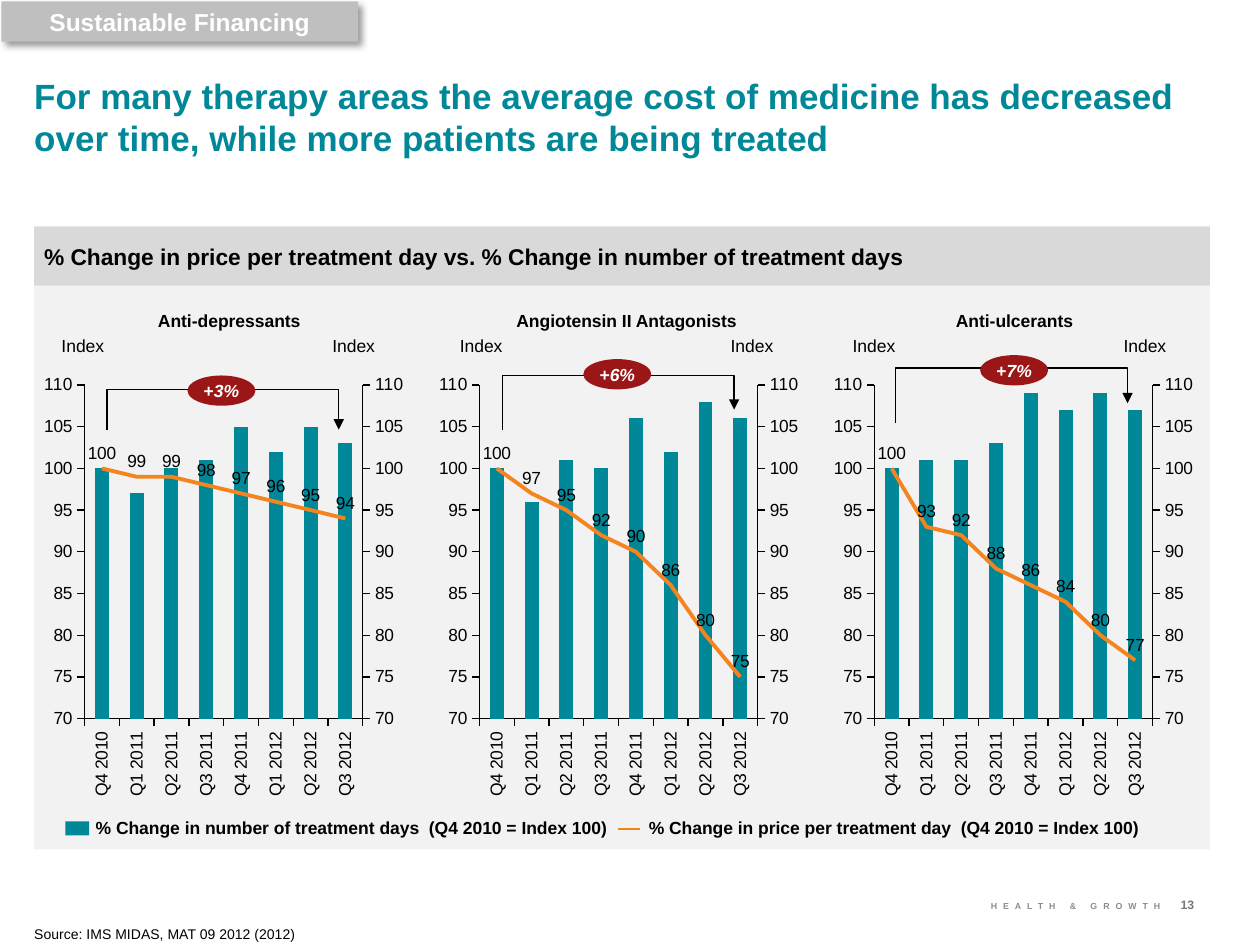
import copy
import pptx
import pptx.chart.data
import pptx.dml.color
import pptx.enum.chart
import pptx.enum.shapes
import pptx.enum.text
import pptx.oxml
import pptx.oxml.ns
import pptx.util

Cm = pptx.util.Cm
Pt = pptx.util.Pt
qn = pptx.oxml.ns.qn
Align = pptx.enum.text.PP_ALIGN
Anchor = pptx.enum.text.MSO_ANCHOR
Shapes = pptx.enum.shapes.MSO_SHAPE

TEAL, ORANGE, RED = "008898", "F5841F", "9B1717"
QUARTERS = ["Q4 2010", "Q1 2011", "Q2 2011", "Q3 2011",
            "Q4 2011", "Q1 2012", "Q2 2012", "Q3 2012"]


def color(hex_text):
    return pptx.dml.color.RGBColor.from_string(hex_text)


def xml(tag, body="", attributes=""):
    """Make one element with its namespaces declared."""
    spaces = pptx.oxml.ns.nsdecls("a", "c")
    return pptx.oxml.parse_xml(f"<{tag} {spaces} {attributes}>{body}</{tag}>")


class SlideBuilder:
    font_name = "Arial"

    def __init__(self, page):
        self.page = page

    def style_text(self, shape, size, ink="000000", bold=False, align=Align.LEFT,
                   anchor=Anchor.TOP, inset=0.0, wrap=True):
        frame = shape.text_frame
        frame.word_wrap = wrap
        frame.auto_size = pptx.enum.text.MSO_AUTO_SIZE.NONE
        frame.vertical_anchor = anchor
        frame.margin_left = frame.margin_right = Cm(inset)
        frame.margin_top = frame.margin_bottom = Cm(inset / 2)
        for para in frame.paragraphs:
            para.alignment = align
            for span in para.runs:
                span.font.name = self.font_name
                span.font.size = Pt(size)
                span.font.bold = bold
                span.font.color.rgb = color(ink)

    def title(self, text, left, top, width, height):
        shape = self.page.shapes.title
        shape.left, shape.top, shape.width, shape.height = map(Cm, (left, top, width, height))
        shape.text_frame.text = text
        self.style_text(shape, 20, TEAL, bold=True)

    def text(self, text, left, top, width, height, size=10, **style):
        box = self.page.shapes.add_textbox(Cm(left), Cm(top), Cm(width), Cm(height))
        box.text_frame.text = text
        self.style_text(box, size, **style)
        return box.text_frame.paragraphs[0]

    def shape(self, kind, fill, left, top, width, height):
        shape = self.page.shapes.add_shape(kind, Cm(left), Cm(top), Cm(width), Cm(height))
        shape.shadow.inherit = False
        shape.fill.solid()
        shape.fill.fore_color.rgb = color(fill)
        shape.line.fill.background()
        return shape

    def tag(self, text, left, top, width, height):
        shape = self.shape(Shapes.RECTANGLE, "BFBFBF", left, top, width, height)
        shape.text_frame.text = text
        self.style_text(shape, 14, "FFFFFF", True, Align.CENTER, Anchor.MIDDLE)
        shadow = xml("a:outerShdw", '<a:srgbClr val="000000"><a:alpha val="40000"/></a:srgbClr>',
                     'blurRad="50800" dist="38100" dir="2700000" algn="tl" rotWithShape="0"')
        shape._element.spPr.find(qn("a:effectLst")).append(shadow)

    def badge(self, growth, left, top):
        shape = self.shape(Shapes.OVAL, RED, left, top, 1.37, 0.61)
        para = shape.text_frame.paragraphs[0]
        for part in ("+", growth):
            para.add_run().text = part
        self.style_text(shape, 10, "FFFFFF", True, Align.CENTER, Anchor.MIDDLE, wrap=False)
        para.runs[1].font.italic = True

    def bracket(self, left, top, start, tip):
        """Draw a line up, across 4.67 cm and down to an arrow tip."""
        right = left + 4.67
        builder = self.page.shapes.build_freeform(Cm(left), Cm(start))
        builder.add_line_segments(
            [(Cm(x), Cm(y)) for x, y in ((left, top), (right, top), (right, tip))], close=False)
        shape = builder.convert_to_shape()
        shape.shadow.inherit = False
        shape.fill.background()
        shape.line.color.rgb = color("000000")
        shape.line.width = Pt(0.75)
        shape.line._get_or_add_ln().append(xml("a:tailEnd", attributes='type="triangle"'))

    def line(self, left, right, y, ink, width):
        connector = self.page.shapes.add_connector(
            pptx.enum.shapes.MSO_CONNECTOR.STRAIGHT, Cm(left), Cm(y), Cm(right), Cm(y))
        connector.line.color.rgb = color(ink)
        connector.line.width = Pt(width)
        connector._element.spPr.append(xml("a:effectLst"))

    def chart(self, days, prices, left, top, width, height):
        data = pptx.chart.data.CategoryChartData()
        data.categories = QUARTERS
        data.add_series("Treatment days", days)
        data.add_series("Price per treatment day", prices)
        chart = self.page.shapes.add_chart(
            pptx.enum.chart.XL_CHART_TYPE.COLUMN_CLUSTERED,
            Cm(left), Cm(top), Cm(width), Cm(height), data).chart
        chart.has_legend = chart.has_title = False
        chart.font.name = self.font_name
        chart.font.size = Pt(10)
        chart.font.color.rgb = color("000000")
        chart.plots[0].gap_width = 150
        chart.plots[0].vary_by_categories = False

        scale = chart.value_axis
        scale.minimum_scale, scale.maximum_scale, scale.major_unit = 70, 110, 5
        scale.has_major_gridlines = False
        scale.tick_labels.number_format = "#,##0"
        scale.tick_labels.number_format_is_linked = False
        for axis in (scale, chart.category_axis):
            axis.major_tick_mark = pptx.enum.chart.XL_TICK_MARK.OUTSIDE
            axis.format.line.color.rgb = color("000000")
            axis.format.line.width = Pt(0.75)
        chart.category_axis.tick_labels.font.size = Pt(10)
        turned = chart.category_axis._element.find(qn("c:txPr")).find(qn("a:bodyPr"))
        turned.set("rot", "-5400000")
        turned.set("vert", "horz")

        self.move_prices_to_right_axis(chart)
        bars, line = (plot.series[0] for plot in chart.plots)
        bars.format.fill.solid()
        bars.format.fill.fore_color.rgb = color(TEAL)
        line.smooth = False
        line.marker.style = pptx.enum.chart.XL_MARKER_STYLE.NONE
        line.format.line.color.rgb = color(ORANGE)
        line.format.line.width = Pt(2.25)
        labels = line.data_labels
        labels.show_value = True
        labels.number_format = "#,##0"
        labels.number_format_is_linked = False
        labels.position = pptx.enum.chart.XL_LABEL_POSITION.ABOVE

    def move_prices_to_right_axis(self, chart):
        area = chart._chartSpace.chart.plotArea
        columns = area.find(qn("c:barChart"))
        series = columns.findall(qn("c:ser"))[1]
        for bar_only in series.findall(qn("c:invertIfNegative")):
            series.remove(bar_only)
        lines = xml("c:lineChart", '<c:grouping val="standard"/><c:varyColors val="0"/>'
                    '<c:marker val="1"/><c:axId val="501"/><c:axId val="502"/>')
        lines.insert(2, series)
        columns.addnext(lines)
        for name, own, other, changes in (
                ("c:valAx", "502", "501", {"c:axPos": "r", "c:crosses": "max"}),
                ("c:catAx", "501", "502", {"c:delete": "1"})):
            axis = copy.deepcopy(area.find(qn(name)))
            for tag, value in {"c:axId": own, "c:crossAx": other, **changes}.items():
                axis.find(qn(tag)).set("val", value)
            area.findall(qn("c:valAx"))[-1].addnext(axis)
        for old in area.findall(qn("c:layout")):
            area.remove(old)
        places = "".join(f'<c:{tag} val="{value}"/>' for tag, value in (
            ("layoutTarget", "inner"), ("xMode", "edge"), ("yMode", "edge"),
            ("x", 0.108), ("y", 0.053), ("w", 0.785), ("h", 0.754)))
        area.insert(0, xml("c:layout", f"<c:manualLayout>{places}</c:manualLayout>"))


# heading, its left, index left, days, prices
PANELS = [
    ("Anti-depressants", 1.57, 0.99,
     (100, 97, 100, 101, 105, 102, 105, 103), (100, 99, 99, 98, 97, 96, 95, 94)),
    ("Angiotensin II Antagonists", 9.58, 9.02,
     (100, 96, 101, 100, 106, 102, 108, 106), (100, 97, 95, 92, 90, 86, 80, 75)),
    ("Anti-ulcerants", 17.4, 16.94,
     (100, 101, 101, 103, 109, 107, 109, 107), (100, 93, 92, 88, 86, 84, 80, 77)),
]
# bracket (left, top, start, tip), badge (growth, left, top)
GROWTH = [
    ((2.16, 7.85, 8.66, 8.66), ("3%", 3.78, 7.57)),
    ((10.13, 7.57, 8.66, 8.26), ("6%", 11.76, 7.24)),
    ((18.06, 7.42, 8.53, 8.13), ("7%", 19.76, 7.16)),
]


def main():
    deck = pptx.Presentation()
    deck.slide_width, deck.slide_height = Cm(25.4), Cm(19.05)
    build = SlideBuilder(deck.slides.add_slide(deck.slide_layouts[5]))

    build.shape(Shapes.RECTANGLE, "F2F2F2", 0.69, 4.55, 23.7, 12.57)
    build.title("For many therapy areas the average cost of medicine has decreased over time, "
                "while more patients are being treated", 0.69, 1.5, 23.7, 1.7)
    footer = build.text("HEALTH & GROWTH", 15.6, 18.16, 7.8, 0.41, 5,
                        ink="8C8C8C", bold=True, align=Align.RIGHT)
    footer.runs[0]._r.get_or_add_rPr().set("spc", "340")
    build.text("13", 23.8, 18.08, 1.09, 0.43, 7, ink="77787B", bold=True)
    band = build.shape(Shapes.RECTANGLE, "D9D9D9", 0.69, 4.57, 23.7, 1.19)
    band.text_frame.text = ("% Change in price per treatment day vs. "
                            "% Change in number of treatment days")
    build.style_text(band, 13, bold=True, anchor=Anchor.MIDDLE, inset=0.2)
    build.tag("Sustainable Financing", 0.03, 0.03, 7.19, 0.81)
    source = build.text("Source: IMS MIDAS, MAT 09 2012 (2012)", 0.69, 17.98, 24.41, 1.02, 8,
                        anchor=Anchor.BOTTOM)
    source.line_spacing = 0.9

    for number, (heading, heading_left, index_left, days, prices) in enumerate(PANELS):
        build.text(heading, heading_left, 6.12, 6.1, 0.69, bold=True,
                   align=Align.CENTER, inset=0.25)
        build.chart(days, prices, 0.89 + 7.96 * number, 7.29, 7.24, 8.92)
        for left in (index_left, index_left + 5.46):
            build.text("Index", left, 6.63, 1.37, 0.69, inset=0.25, wrap=False)

    build.shape(Shapes.RECTANGLE, TEAL, 1.32, 16.56, 0.48, 0.28)
    build.line(12.45, 12.9, 16.71, "F58119", 1.5)
    for subject, left in (("number of treatment days", 1.93), ("price per treatment day", 13.08)):
        build.text(f"% Change in {subject}  (Q4 2010 = Index 100)", left, 16.48, 10.49, 0.43,
                   bold=True)

    for bracket, badge in GROWTH:
        build.bracket(*bracket)
        build.badge(*badge)
    deck.save("out.pptx")


if __name__ == "__main__":
    main()
